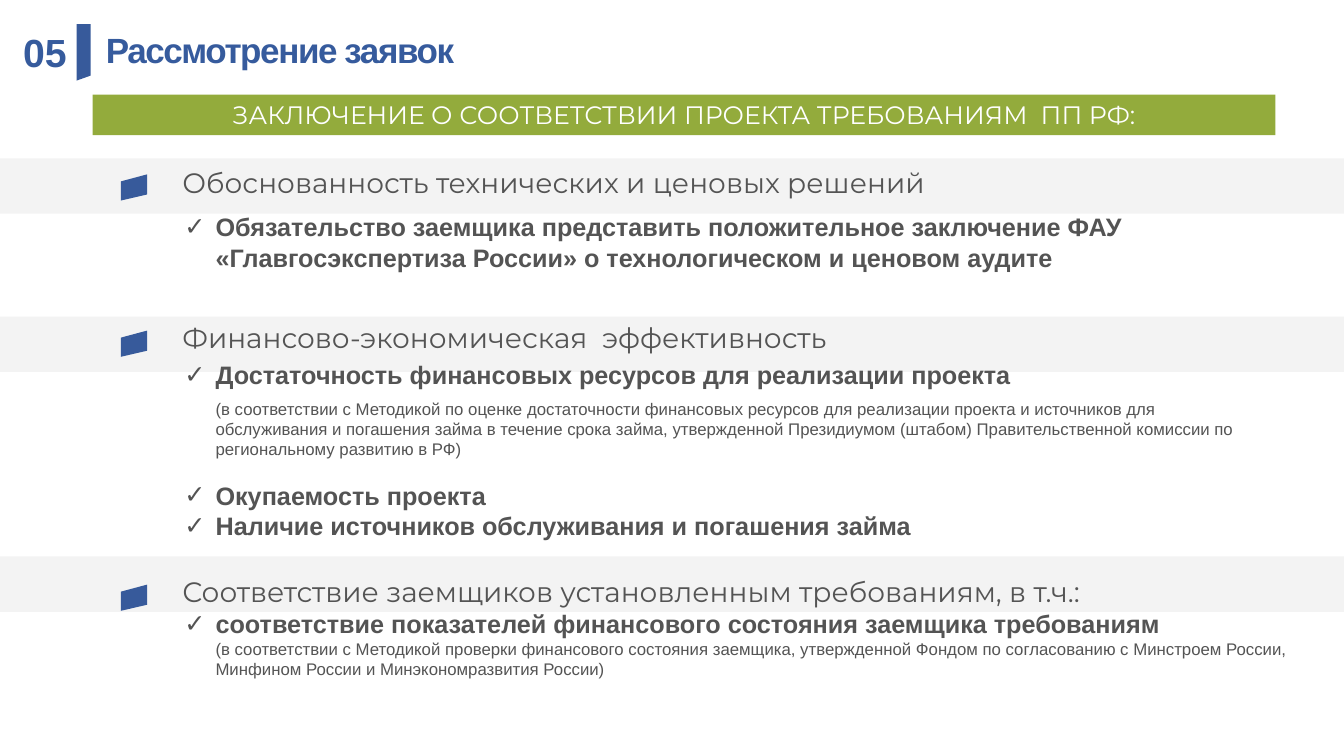
from dataclasses import dataclass

from lxml import etree
from pptx import Presentation
from pptx.dml.color import RGBColor
from pptx.enum import shapes, text
from pptx.oxml import ns
from pptx.util import Emu, Pt

PX = 9144
WIDTH, HEIGHT = 1333, 750
BLUE = RGBColor(0x36, 0x5B, 0x9D)
MARK_BLUE = RGBColor(0x37, 0x5A, 0x9B)
GREEN = RGBColor(0x93, 0xAB, 0x3C)
BAND_GRAY = RGBColor(0xEB, 0xEB, 0xEB)
TEXT_GRAY = RGBColor(0x54, 0x54, 0x54)
WHITE = RGBColor(0xFF, 0xFF, 0xFF)
BAND_ALPHA = 56000
INDENT = 31


@dataclass(frozen=True)
class Style:
    size: int
    name: str
    color: RGBColor
    bold: bool = False


@dataclass(frozen=True)
class Item:
    words: str
    checked: bool = True
    before: int = 0


@dataclass(frozen=True)
class Section:
    heading: str
    band_top: int
    heading_top: int
    mark_top: int
    list_top: int
    list_width: int
    list_height: int
    items: tuple[Item, ...]


NUMBER = Style(28, "Arial", BLUE, True)
TITLE = Style(25, "Arial", BLUE, True)
BANNER = Style(18, "Montserrat", WHITE)
HEADING = Style(20, "Montserrat", TEXT_GRAY)
CHECKED = Style(18, "Arial", TEXT_GRAY, True)
NOTE = Style(12, "Arial", TEXT_GRAY)

SECTIONS = (
    Section(
        "Обоснованность технических и ценовых решений",
        157, 159, 173, 205, 1147, 71,
        (Item("Обязательство заемщика представить положительное заключение ФАУ "
              "«Главгосэкспертиза России» о технологическом и ценовом аудите"),),
    ),
    Section(
        "Финансово-экономическая  эффективность",
        314, 313, 328, 352, 1088, 192,
        (
            Item("Достаточность финансовых ресурсов для реализации проекта"),
            Item("(в соответствии с Методикой по оценке достаточности финансовых "
                 "ресурсов для реализации проекта и источников для обслуживания и "
                 "погашения займа в течение срока займа, утвержденной Президиумом "
                 "(штабом) Правительственной комиссии по региональному развитию в РФ)",
                 False, 6),
            Item("Окупаемость проекта", before=15),
            Item("Наличие источников обслуживания и погашения займа"),
        ),
    ),
    Section(
        "Соответствие заемщиков установленным требованиям, в т.ч.:",
        552, 565, 580, 599, 1147, 81,
        (
            Item("соответствие показателей финансового состояния заемщика требованиям"),
            Item("(в соответствии с Методикой проверки финансового состояния заемщика, "
                 "утвержденной Фондом по согласованию с Минстроем России, Минфином "
                 "России и Минэкономразвития России)", False),
        ),
    ),
)


def px(*lengths: int) -> list[Emu]:
    return [Emu(length * PX) for length in lengths]


def paint(shape, color: RGBColor) -> None:
    shape.shadow.inherit = False
    shape.fill.solid()
    shape.fill.fore_color.rgb = color
    shape.line.fill.background()


def add_rectangle(page, left: int, top: int, width: int, height: int, color: RGBColor):
    shape = page.shapes.add_shape(
        shapes.MSO_SHAPE.RECTANGLE, *px(left, top, width, height))
    paint(shape, color)
    return shape


def add_band(page, top: int) -> None:
    band = add_rectangle(page, 0, top, WIDTH, 55, BAND_GRAY)
    color = band.fill._xPr.find(".//" + ns.qn("a:srgbClr"))
    etree.SubElement(color, ns.qn("a:alpha"), val=str(BAND_ALPHA))


def add_outline(page, points: list[tuple[int, int]]) -> None:
    builder = page.shapes.build_freeform(*points[0], scale=float(PX))
    builder.add_line_segments(points[1:], close=True)
    paint(builder.convert_to_shape(), MARK_BLUE)


def add_mark(page, top: int) -> None:
    left, right = 120, 146
    add_outline(page, [(left, top + 7), (right, top),
                       (right, top + 20), (left, top + 26)])


def format_frame(box, inset: int, **values) -> None:
    settings = {
        "word_wrap": True,
        "auto_size": text.MSO_AUTO_SIZE.SHAPE_TO_FIT_TEXT,
        "vertical_anchor": text.MSO_ANCHOR.TOP,
        "margin_left": Emu(inset * PX),
        "margin_right": Emu(inset * PX),
        "margin_top": Emu(5 * PX),
        "margin_bottom": Emu(5 * PX),
    } | values
    for name, value in settings.items():
        setattr(box.text_frame, name, value)


def add_box(page, left: int, top: int, width: int, height: int,
            inset: int = 10, **values):
    box = page.shapes.add_textbox(*px(left, top, width, height))
    format_frame(box, inset, **values)
    return box


def write(para, words: str, style: Style):
    span = para.add_run()
    span.text = words
    for name in ("size", "name", "bold"):
        value = getattr(style, name)
        setattr(span.font, name, Pt(value) if name == "size" else value)
    span.font.color.rgb = style.color
    return span


def add_items(page, section: Section) -> None:
    box = add_box(page, 173, section.list_top, section.list_width, section.list_height)
    frame = box.text_frame
    for index, item in enumerate(section.items):
        para = frame.add_paragraph() if index else frame.paragraphs[0]
        properties = para._p.get_or_add_pPr()
        properties.set("marL", str(INDENT * PX))
        properties.set("indent", str(-INDENT * PX if item.checked else 0))
        if item.checked:
            etree.SubElement(properties, ns.qn("a:buFont"), typeface="Arial")
            etree.SubElement(properties, ns.qn("a:buChar"), char="✓")
        else:
            etree.SubElement(properties, ns.qn("a:buNone"))
        if item.before:
            para.space_before = Pt(item.before)
        write(para, item.words, CHECKED if item.checked else NOTE)


def add_header(page) -> None:
    middle = text.MSO_ANCHOR.MIDDLE
    add_outline(page, [(76, 24), (90, 24), (90, 75), (76, 80)])
    number = add_box(page, 18, 23, 54, 57, 5, word_wrap=False, vertical_anchor=middle)
    write(number.text_frame.paragraphs[0], "05", NUMBER)

    title = add_box(page, 100, 28, 1150, 48, 5, vertical_anchor=middle)
    para = title.text_frame.paragraphs[0]
    para.line_spacing = 0.9
    span = write(para, "Рассмотрение заявок", TITLE)
    span.font._element.set("spc", "-100")

    banner = add_rectangle(page, 92, 94, 1173, 40, GREEN)
    format_frame(banner, 5)
    para = banner.text_frame.paragraphs[0]
    para.alignment = text.PP_ALIGN.CENTER
    write(para, "ЗАКЛЮЧЕНИЕ О СООТВЕТСТВИИ ПРОЕКТА ТРЕБОВАНИЯМ  ПП РФ:", BANNER)


def main() -> None:
    deck = Presentation()
    deck.slide_width, deck.slide_height = px(WIDTH, HEIGHT)
    page = deck.slides.add_slide(deck.slide_layouts[6])
    for section in SECTIONS:
        add_band(page, section.band_top)
    add_header(page)
    for section in SECTIONS:
        add_mark(page, section.mark_top)
        heading = add_box(page, 171, section.heading_top, 1095, 45)
        write(heading.text_frame.paragraphs[0], section.heading, HEADING)
        add_items(page, section)
    deck.save("out.pptx")


if __name__ == "__main__":
    main()
